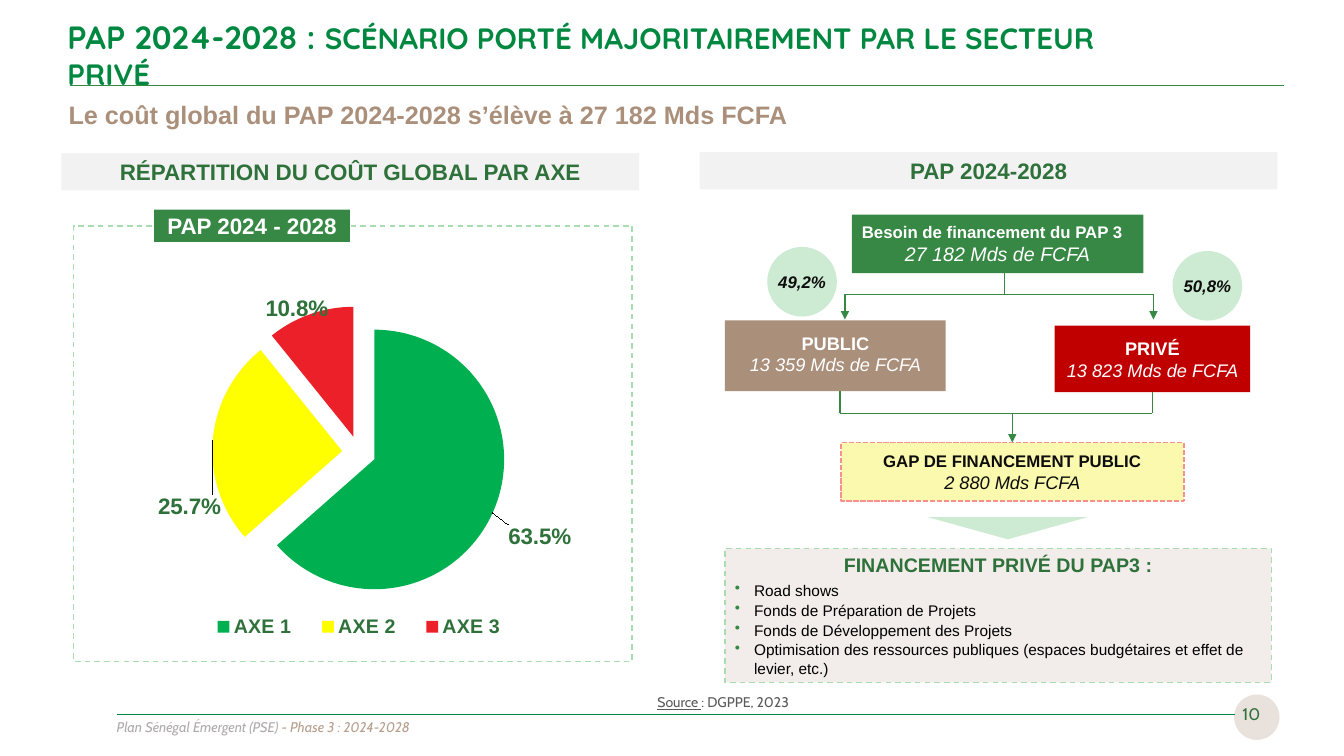
from lxml import etree
from pptx import Presentation
from pptx.chart.data import CategoryChartData
from pptx.dml.color import RGBColor
from pptx.enum.chart import XL_CHART_TYPE, XL_LABEL_POSITION, XL_LEGEND_POSITION
from pptx.enum.dml import MSO_LINE
from pptx.enum.shapes import MSO_CONNECTOR, MSO_SHAPE
from pptx.enum.text import MSO_ANCHOR, PP_ALIGN
from pptx.oxml import parse_xml
from pptx.oxml.ns import nsdecls, qn
from pptx.util import Pt

PX = 9144  # 100 px to the inch
RECT, OVAL, WEDGE = MSO_SHAPE.RECTANGLE, MSO_SHAPE.OVAL, MSO_SHAPE.ISOSCELES_TRIANGLE
LEFT, MID, RIGHT = PP_ALIGN.LEFT, PP_ALIGN.CENTER, PP_ALIGN.RIGHT
TOP, HALF = MSO_ANCHOR.TOP, MSO_ANCHOR.MIDDLE
DASH, DOTS = MSO_LINE.DASH, MSO_LINE.SQUARE_DOT
STRAIGHT, PIE = MSO_CONNECTOR.STRAIGHT, XL_CHART_TYPE.PIE
BELOW, INSIDE = XL_LEGEND_POSITION.BOTTOM, XL_LABEL_POSITION.INSIDE_END

GREEN, DEEP, LEAF, BROWN = "388845", "2F713A", "008740", "AA8F7A"
MINT, PALE, INK, WHITE = "CDEBD2", "A7DDB0", "0D0D0D", "FFFFFF"


def color(code):
    return RGBColor.from_string(code)


def px(*sizes):
    return [round(size * PX) for size in sizes]


def style(font, size, code, face="Arial", bold=False, italic=False):
    font.size, font.name = Pt(size), face
    font.bold, font.italic = bold, italic
    font.color.rgb = color(code)


def write(shape, lines, align=MID, anchor=HALF, inset=(10, 5, 10, 5)):
    """Fill a shape with lines given as (text, size, colour, options)."""
    frame = shape.text_frame
    frame.word_wrap, frame.vertical_anchor = True, anchor
    (frame.margin_left, frame.margin_top,
     frame.margin_right, frame.margin_bottom) = px(*inset)
    frame.text = "\n".join(line[0] for line in lines)
    for para, (_, size, code, opts) in zip(frame.paragraphs, lines):
        para.alignment = align
        style(para.runs[0].font, size, code, **opts)
    return frame.paragraphs


def extend(para, text, size, code, **opts):
    run = para.add_run()
    run.text = text
    style(run.font, size, code, **opts)


def block(slide, box, fill, kind=RECT, edge=None, width=1, dash=DASH):
    shape = slide.shapes.add_shape(kind, *px(*box))
    shape.shadow.inherit = False
    shape.fill.solid()
    shape.fill.fore_color.rgb = color(fill)
    if edge:
        shape.line.color.rgb = color(edge)
        shape.line.width, shape.line.dash_style = Pt(width), dash
    else:
        shape.line.fill.background()
    return shape


def label(slide, box, *args, **opts):
    return write(slide.shapes.add_textbox(*px(*box)), *args, **opts)


def link(slide, x1, y1, x2, y2, code=GREEN, arrow=False):
    line = slide.shapes.add_connector(STRAIGHT, *px(x1, y1, x2, y2))
    line.line.color.rgb, line.line.width = color(code), Pt(1)
    props = line.line._get_or_add_ln()
    if arrow:
        etree.SubElement(props, qn("a:tailEnd"), type="triangle")
    etree.SubElement(props.getparent(), qn("a:effectLst"))
    return line


def pair(head, amount, size, small, code=WHITE):
    """Bold heading above an italic amount."""
    return [(head, size, code, dict(bold=True)), (amount, small, code, dict(italic=True))]


def banner(slide, x, y, text):
    bar = block(slide, (x, y, 573, 37), "F2F2F2")
    write(bar, [(text, 16, DEEP, dict(bold=True))], anchor=TOP)


def header(slide, x, y):
    title = label(slide, (x, y, 1106, 49),
                  [("PAP 2024-2028 : ", 23, LEAF, dict(face="Quicksand", bold=True))], LEFT)
    extend(title[0], "SCÉNARIO PORTÉ MAJORITAIREMENT PAR LE SECTEUR PRIVÉ",
           21, LEAF, face="Quicksand", bold=True)
    link(slide, x + 12, y + 56, x + 1217, y + 56)
    label(slide, (x + 11, y + 65, 1174, 40),
          [("Le coût global du PAP 2024-2028 s’élève à 27 182 Mds FCFA", 18, BROWN,
            dict(bold=True))], LEFT, TOP, (0, 5, 10, 5))


def footer(slide, x, y):
    block(slide, (x + 1118, y + 14, 45, 45), "E8E1DC", OVAL)
    plan = label(slide, (x, y + 33, 963, 27),
                 [("Plan Sénégal Émergent (PSE) ", 10, "AFABAB",
                   dict(face="Cabin", italic=True))], LEFT, TOP)
    extend(plan[0], "- Phase 3 : 2024-2028", 10, "B69F8D", face="Cabin", italic=True)
    link(slide, x + 10, y + 34, x + 1119, y + 34, LEAF)
    label(slide, (x + 1097, y + 13, 57, 40), [("10", 12, DEEP, dict(face="Cabin"))], RIGHT)
    source = label(slide, (x + 521, y, 258, 33),
                   [("Source ", 10, "595959", dict(face="Cabin"))], LEFT, TOP, (0, 5, 10, 5))[0]
    source.runs[0].font.underline = True
    source.line_spacing, source.space_after = 1.5, Pt(6)
    source._p.get_or_add_pPr().set("marL", str(25 * PX))
    extend(source, ": DGPPE, 2023", 10, "595959", face="Cabin")


def layout(x, y, w=None, h=None, inner=False):
    """Manual chart layout; without a size it is an offset."""
    parts = '<c:layoutTarget val="inner"/>' if inner else ""
    if w:
        parts += '<c:xMode val="edge"/><c:yMode val="edge"/>'
    sides = zip("xywh", (x, y, w, h))
    parts += "".join(f'<c:{key} val="{val}"/>' for key, val in sides if val is not None)
    return parse_xml(f'<c:layout {nsdecls("c")}><c:manualLayout>{parts}'
                     '</c:manualLayout></c:layout>')


def place(parent, before, node):
    """Put a layout after the named child, replacing any present."""
    for old in parent.findall(qn("c:layout")):
        parent.remove(old)
    if before:
        parent.find(qn(before)).addnext(node)
    else:
        parent.insert(0, node)


def pie(slide, box):
    data = CategoryChartData()
    data.categories = ["AXE 1", "AXE 2", "AXE 3"]
    data.add_series("Series 1", (63.5, 25.7, 10.8))
    chart = slide.shapes.add_chart(PIE, *px(*box), data).chart
    chart.has_title, chart.has_legend = False, True
    style(chart.font, 14, DEEP, bold=True)
    legend = chart.legend
    legend.position, legend.include_in_layout = BELOW, False
    style(legend.font, 14, DEEP, bold=True)
    place(legend._element, "c:legendPos", layout(0.13, 0.91, 0.71, 0.08))
    plot = chart.plots[0]
    plot.vary_by_categories = True
    place(plot._element.getparent(), None, layout(0.17, 0.12, 0.63, 0.76, True))
    series = plot.series[0]
    node = series._element
    node.find(qn("c:tx")).addnext(parse_xml(f'<c:explosion {nsdecls("c")} val="13"/>'))
    tags = series.data_labels
    tags.show_percentage, tags.show_value = True, False
    tags.number_format, tags.number_format_is_linked = "0.0%", False
    tags.position = INSIDE
    style(tags.font, 16, DEEP, bold=True)
    slices = [("00B050", 0.18, 0.1), ("FFFF00", -0.13, 0.17), ("EB2029", -0.1, -0.06)]
    for index, (code, dx, dy) in enumerate(slices):
        point = series.points[index]
        point.format.fill.solid()
        point.format.fill.fore_color.rgb = color(code)
        style(point.data_label.font, 16, DEEP, bold=True)
        point.data_label.position = INSIDE
        tag = node.findall(".//" + qn("c:dLbl"))[index]
        tag.find(qn("c:showVal")).set("val", "0")
        tag.find(qn("c:showPercent")).set("val", "1")
        place(tag, "c:idx", layout(dx, dy))
        tag.find(qn("c:layout")).addnext(parse_xml(
            f'<c:numFmt {nsdecls("c")} formatCode="0.0%" sourceLinked="0"/>'))


def split(slide, x, y):
    """Left region: cost by axis."""
    block(slide, (x + 12, y + 72, 554, 432), WHITE, edge=PALE)
    pie(slide, (x + 71, y + 105, 462, 384))
    banner(slide, x, y, "RÉPARTITION DU COÛT GLOBAL PAR AXE")
    tab = block(slide, (x + 92, y + 56, 194, 32), GREEN)
    write(tab, [("PAP 2024 - 2028", 16, WHITE, dict(bold=True))])


def flow(slide, x, y):
    """Right region: how the need is financed."""
    banner(slide, x, y, "PAP 2024-2028")
    need = block(slide, (x + 151, y + 62, 289, 58), GREEN)
    lines = write(need, pair("Besoin de financement du PAP 3", "27 182 Mds de FCFA", 12, 14))
    lines[0].alignment = LEFT
    public = block(slide, (x + 25, y + 167, 219, 70), BROWN)
    write(public, pair("PUBLIC", "13 359 Mds de FCFA", 13, 13), inset=(10, 8, 10, 12))
    private = block(slide, (x + 352, y + 172, 194, 66), "C00000")
    write(private, pair("PRIVÉ", "13 823 Mds de FCFA", 13, 13))
    gap = block(slide, (x + 140, y + 288, 340, 58), "FBF9AD", edge="F89090", width=1.25, dash=DOTS)
    write(gap, pair("GAP DE FINANCEMENT PUBLIC", "2 880 Mds FCFA", 12, 13, INK))
    for dx, dy, share in ((67, 94, "49,2%"), (469, 98, "50,8%")):
        disc = block(slide, (x + dx, y + dy, 69, 69), MINT, OVAL)
        write(disc, [(share, 12, INK, dict(bold=True, italic=True))], inset=(0, 0, 0, 0))
    link(slide, x + 302, y + 120, x + 302, y + 141)
    link(slide, x + 144, y + 141, x + 450, y + 141)
    for dx in (144, 450):
        link(slide, x + dx, y + 141, x + dx, y + 166, arrow=True)
    link(slide, x + 139, y + 237, x + 139, y + 259)
    link(slide, x + 449, y + 238, x + 449, y + 259).begin_connect(private, 2)
    link(slide, x + 139, y + 259, x + 449, y + 259)
    link(slide, x + 310, y + 259, x + 310, y + 288, arrow=True).end_connect(gap, 0)
    block(slide, (x + 226, y + 362, 159, 22), MINT, WEDGE).rotation = 180
    means(slide, (x + 25, y + 393, 542, 133))


def means(slide, box):
    items = ["Road shows", "Fonds de Préparation de Projets", "Fonds de Développement des Projets",
             "Optimisation des ressources publiques (espaces budgétaires et effet de levier, etc.)"]
    panel = block(slide, box, "F2EDEA", edge=PALE)
    lines = write(panel, [("FINANCEMENT PRIVÉ DU PAP3 :", 14, DEEP, dict(bold=True))]
                  + [(item, 11, "000000", {}) for item in items])
    lines[0].space_after = Pt(3)
    for para in lines[1:]:
        para.alignment, para.space_after = LEFT, Pt(1)
        props = para._p.get_or_add_pPr()
        props.set("marL", str(19 * PX))
        props.set("indent", str(-19 * PX))
        tint = etree.SubElement(props, qn("a:buClr"))
        etree.SubElement(tint, qn("a:srgbClr"), val=GREEN)
        etree.SubElement(props, qn("a:buChar"), char="•")


def main():
    deck = Presentation()
    deck.slide_width, deck.slide_height = px(1333, 750)
    slide = deck.slides.add_slide(deck.slide_layouts[6])
    footer(slide, 106, 675)
    header(slide, 57, 29)
    split(slide, 61, 152)
    flow(slide, 694, 151)
    deck.save("out.pptx")


if __name__ == "__main__":
    main()
